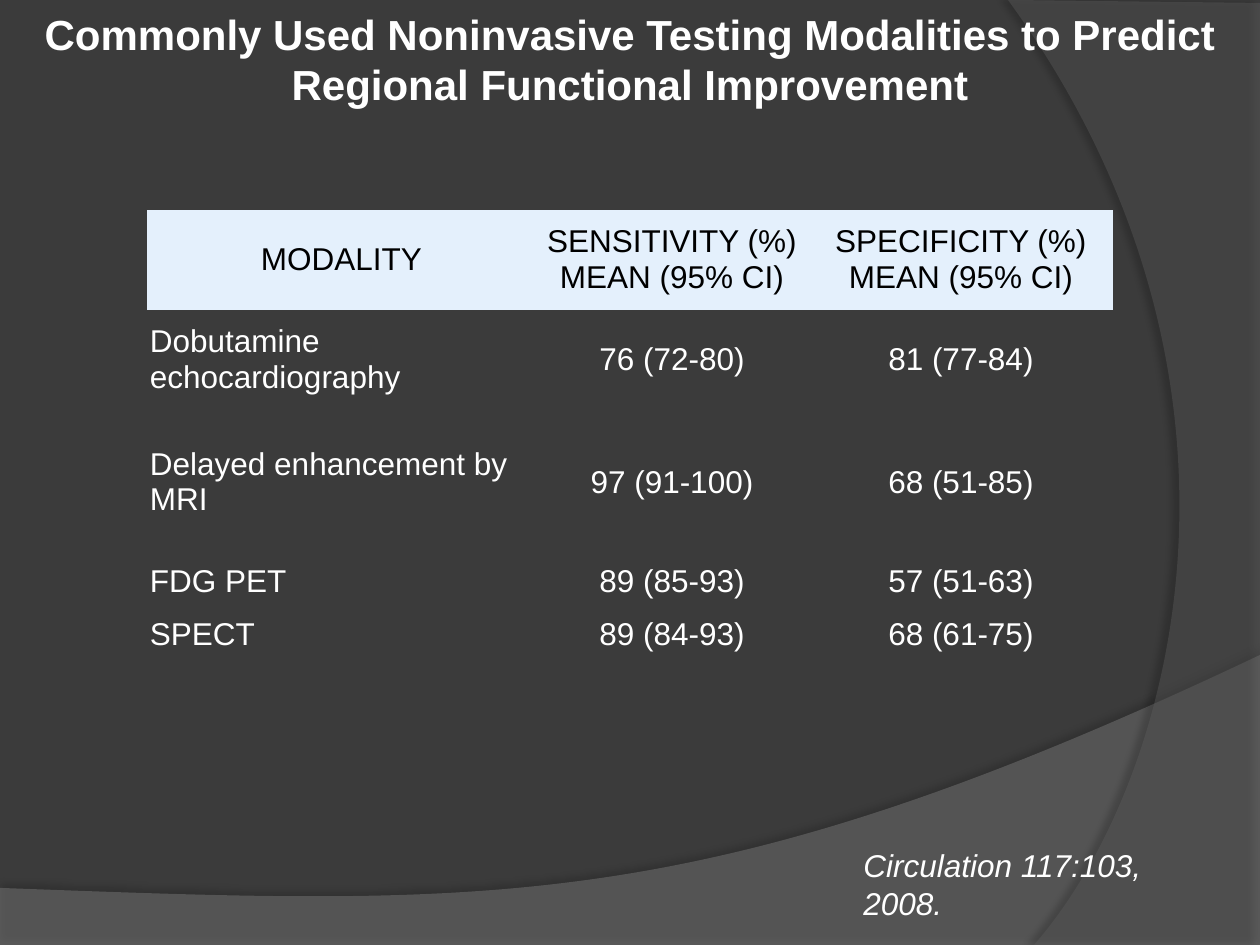
from lxml import etree
from pptx import Presentation
from pptx import util as u
from pptx.dml.color import RGBColor
from pptx.enum import text
from pptx.oxml import ns

SCALE = 914400 / 126
SLIDE = (1260, 945)
NO_GRID_STYLE = "{2D5ABB26-0587-4C30-8999-92F81FD0307C}"

THEME = {
    "font": "Arial",
    "background": "3B3B3B",
    "light": "FFFFFF",
    "dark": "000000",
    "header_fill": "E4F0FC",
    "bottom_swoosh": "7F7F7F",
    "right_swoosh": "5E5E5E",
    "title_size": 24,
    "body_size": 18,
}

TITLE = "Commonly Used Noninvasive Testing Modalities to Predict Regional Functional Improvement"
CITATION = "Circulation 117:103, 2008."
ROWS = [
    ("MODALITY", "SENSITIVITY (%)\vMEAN (95% CI)", "SPECIFICITY (%)\vMEAN (95% CI)"),
    ("Dobutamine echocardiography", "76 (72-80)", "81 (77-84)"),
    ("Delayed enhancement by MRI", "97 (91-100)", "68 (51-85)"),
    ("FDG PET", "89 (85-93)", "57 (51-63)"),
    ("SPECT", "89 (84-93)", "68 (61-75)"),
]
COLUMN_WIDTHS = [388, 273, 305]
ROW_HEIGHTS = [100, 100, 146, 53, 53]
CELL_MARGINS = {"margin_left": 3, "margin_top": 2, "margin_right": 2, "margin_bottom": 3}

SWOOSHES = [
    {
        "corners": [(0, 945), (1260, 945)],
        "curve": [(1260, 655), (704, 919), (493, 906), (0, 888)],
        "fill": "bottom_swoosh", "alpha": 45,
        "shadow_alpha": 35, "blur": 4, "distance": 3.5, "direction": 270,
    },
    {
        "corners": [(1260, 3), (1260, 945)],
        "curve": [(1034, 945), (1178, 780), (1283, 378), (1008, 0)],
        "fill": "right_swoosh", "alpha": 40,
        "shadow_alpha": 45, "blur": 4, "distance": 4, "direction": 180,
    },
]


def px(value):
    return u.Emu(round(value * SCALE))


def rgb(name):
    return RGBColor.from_string(THEME[name])


def apply(target, formats):
    for name, value in formats.items():
        setattr(target, name, value)


def write(frame, content, size, color, align, **font_formats):
    frame.text = content
    para = frame.paragraphs[0]
    para.alignment = align
    for span in para.runs:
        apply(span.font, {"name": THEME["font"], "size": u.Pt(THEME[size]), **font_formats})
        span.font.color.rgb = rgb(color)


def add_child(parent, tag, **attributes):
    return etree.SubElement(parent, ns.qn(tag), {key: str(value) for key, value in attributes.items()})


def bend_last_side(shape, points, controls):
    left, top = (min(values) for values in zip(*points))
    line = list(shape.element.iter(ns.qn("a:lnTo")))[-1]
    outline = line.getparent()
    bend = add_child(outline, "a:cubicBezTo")
    for x, y in controls:
        add_child(bend, "a:pt", x=x - left, y=y - top)
    outline.replace(line, bend)


def add_swoosh(page, swoosh):
    start, *controls = swoosh["curve"]
    points = swoosh["corners"] + [start, controls[-1]]
    builder = page.shapes.build_freeform(*points[0], scale=SCALE)
    builder.add_line_segments(points[1:], close=True)
    shape = builder.convert_to_shape()
    bend_last_side(shape, points, controls)
    shape.fill.solid()
    shape.fill.fore_color.rgb = rgb(swoosh["fill"])
    shape.line.fill.background()
    shape.shadow.inherit = False
    properties = shape.element.spPr
    fill_color = properties.find(ns.qn("a:solidFill"))[0]
    add_child(fill_color, "a:alpha", val=swoosh["alpha"] * 1000)
    shadow = add_child(
        properties.find(ns.qn("a:effectLst")), "a:outerShdw",
        blurRad=u.Pt(swoosh["blur"]), dist=u.Pt(swoosh["distance"]),
        dir=swoosh["direction"] * 60000, algn="ctr", rotWithShape=0,
    )
    shadow_color = add_child(shadow, "a:srgbClr", val=THEME["dark"])
    add_child(shadow_color, "a:alpha", val=swoosh["shadow_alpha"] * 1000)


def add_title(page):
    title = page.shapes.title
    title.element.getparent().append(title.element)
    apply(title, {"left": px(0), "top": px(0), "width": px(SLIDE[0]), "height": px(118)})
    apply(title.text_frame, {"word_wrap": True, "vertical_anchor": text.MSO_ANCHOR.MIDDLE,
                             "auto_size": text.MSO_AUTO_SIZE.NONE})
    write(title.text_frame, TITLE, "title_size", "light", text.PP_ALIGN.CENTER, bold=True)


def add_modalities(page):
    frame = page.shapes.add_table(
        len(ROWS), len(COLUMN_WIDTHS), px(147), px(210),
        px(sum(COLUMN_WIDTHS)), px(sum(ROW_HEIGHTS)),
    )
    table = frame.table
    apply(table, {"first_row": False, "horz_banding": False})
    table._tbl.tblPr.find(ns.qn("a:tableStyleId")).text = NO_GRID_STYLE
    for column, width in zip(table.columns, COLUMN_WIDTHS):
        column.width = px(width)
    margins = {side: px(margin) for side, margin in CELL_MARGINS.items()}
    for row_index, (values, height) in enumerate(zip(ROWS, ROW_HEIGHTS)):
        table.rows[row_index].height = px(height)
        header = row_index == 0
        for column_index, value in enumerate(values):
            cell = table.cell(row_index, column_index)
            apply(cell, {"vertical_anchor": text.MSO_ANCHOR.MIDDLE, **margins})
            if header:
                cell.fill.solid()
                cell.fill.fore_color.rgb = rgb("header_fill")
            else:
                cell.fill.background()
            centered = header or column_index > 0
            align = text.PP_ALIGN.CENTER if centered else text.PP_ALIGN.LEFT
            write(cell.text_frame, value, "body_size", "dark" if header else "light", align)


def add_citation(page):
    box = page.shapes.add_textbox(px(851), px(840), px(360), px(88))
    box.text_frame.word_wrap = True
    write(box.text_frame, CITATION, "body_size", "light", text.PP_ALIGN.LEFT, italic=True)


def main():
    deck = Presentation()
    apply(deck, {"slide_width": px(SLIDE[0]), "slide_height": px(SLIDE[1])})
    page = deck.slides.add_slide(deck.slide_layouts[5])
    page.background.fill.solid()
    page.background.fill.fore_color.rgb = rgb("background")
    for swoosh in SWOOSHES:
        add_swoosh(page, swoosh)
    add_modalities(page)
    add_title(page)
    add_citation(page)
    deck.save("out.pptx")


if __name__ == "__main__":
    main()
